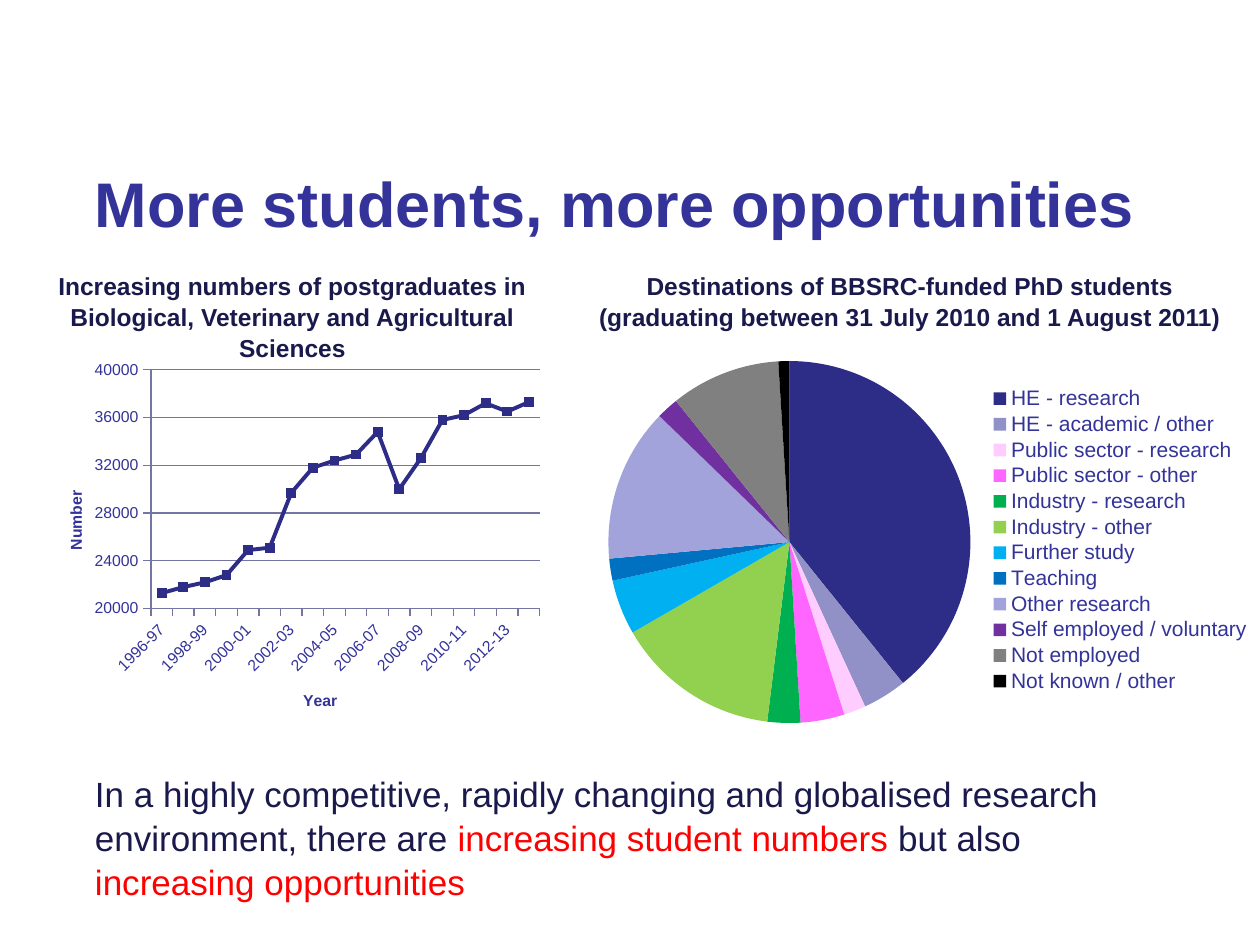
from dataclasses import dataclass

from lxml import etree
from pptx import Presentation
from pptx.chart.data import CategoryChartData
from pptx.dml.color import RGBColor
from pptx.enum.chart import XL_CHART_TYPE, XL_LEGEND_POSITION, XL_MARKER_STYLE, XL_TICK_MARK
from pptx.enum.text import MSO_ANCHOR, PP_ALIGN
from pptx.oxml.ns import qn
from pptx.util import Emu, Pt

LINE, PIE = XL_CHART_TYPE.LINE_MARKERS, XL_CHART_TYPE.PIE
LEFT, CENTER = PP_ALIGN.LEFT, PP_ALIGN.CENTER
SQUARE, OUTSIDE, RIGHT = XL_MARKER_STYLE.SQUARE, XL_TICK_MARK.OUTSIDE, XL_LEGEND_POSITION.RIGHT
TITLE_ONLY = 5


@dataclass(frozen=True)
class Theme:
    font: str = "Arial"
    blue: str = "333399"
    ink: str = "19194C"
    red: str = "FF0000"
    series: str = "2D2D87"
    grid: str = "7575A3"
    title: int = 36
    body: int = 20
    heading: int = 14
    legend: int = 12
    axis: int = 9
    spacing: float = 1.05


THEME = Theme()
TITLE = "More students, more opportunities"
HEADINGS = [
    ("Destinations of BBSRC-funded PhD students (graduating between 31 July 2010 and 1 August 2011)",
     (595, 270, 630, 74)),
    ("Increasing numbers of postgraduates in Biological, Veterinary and Agricultural Sciences",
     (15, 270, 555, 74)),
]
MESSAGE = [
    ("In a highly competitive, rapidly changing and globalised research environment, there are ", THEME.ink),
    ("increasing student numbers ", THEME.red),
    ("but also ", THEME.ink),
    ("increasing opportunities", THEME.red),
]
DESTINATIONS = [
    ("HE - research", 40, THEME.series),
    ("HE - academic / other", 4, "9191C8"),
    ("Public sector - research", 2, "FFCCFF"),
    ("Public sector - other", 4, "FF66FF"),
    ("Industry - research", 3, "00B050"),
    ("Industry - other", 15, "92D050"),
    ("Further study", 5, "00B0F0"),
    ("Teaching", 2, "0070C0"),
    ("Other research", 14, "A3A3DB"),
    ("Self employed / voluntary", 2, "7030A0"),
    ("Not employed", 10, "808080"),
    ("Not known / other", 1, "000000"),
]
FIRST_YEAR = 1996
POSTGRADUATES = [21300, 21800, 22200, 22800, 24900, 25100, 29700, 31800, 32400,
                 32900, 34800, 30000, 32600, 35800, 36200, 37200, 36500, 37300]


def px(value):
    return Emu(round(value * 914400 / 126))


def place(shape, box):
    shape.left, shape.top, shape.width, shape.height = map(px, box)


def style(font, size, color, bold=False):
    font.name, font.size, font.bold = THEME.font, Pt(size), bold
    font.color.rgb = RGBColor.from_string(color)


def write(shape, box, runs, size, bold=False, align=LEFT, spacing=1.0):
    place(shape, box)
    frame = shape.text_frame
    frame.word_wrap = True
    frame.vertical_anchor = MSO_ANCHOR.TOP
    frame.margin_left = frame.margin_top = frame.margin_right = frame.margin_bottom = 0
    paragraph = frame.paragraphs[0]
    paragraph.alignment, paragraph.line_spacing = align, spacing
    for text, color in runs:
        run = paragraph.add_run()
        run.text = text
        style(run.font, size, color, bold)


def add_text(slide, box, *args, **options):
    write(slide.shapes.add_textbox(0, 0, 0, 0), box, *args, **options)


def set_layout(parent, index, box, area, inner=False):
    for old in parent.findall(qn("c:layout")):
        parent.remove(old)
    layout = etree.Element(qn("c:layout"))
    parent.insert(index, layout)
    manual = etree.SubElement(layout, qn("c:manualLayout"))
    fractions = [(box[0] - area[0]) / area[2], (box[1] - area[1]) / area[3]]
    fractions += [length / area[i] for i, length in enumerate(box[2:], 2)]
    settings = [("layoutTarget", "inner")] if inner else []
    settings += [("xMode", "edge"), ("yMode", "edge")]
    settings += [(name, f"{value:.3f}") for name, value in zip("xywh", fractions)]
    for name, value in settings:
        etree.SubElement(manual, qn(f"c:{name}"), val=value)


def add_chart(slide, kind, area, plot_box, categories, values):
    data = CategoryChartData()
    data.categories = categories
    data.add_series("Series 1", values)
    chart = slide.shapes.add_chart(kind, *map(px, area), data).chart
    chart.has_title = chart.has_legend = False
    style(chart.font, 10, THEME.blue)
    plot_area = chart.plots[0]._element.getparent()
    set_layout(plot_area, 0, plot_box, area, inner=True)
    return chart


def add_pie(slide):
    area = (541, 344, 774, 397)
    names, values, colors = zip(*DESTINATIONS)
    chart = add_chart(slide, PIE, area, (608, 361, 362, 362), names, values)
    plot = chart.plots[0]
    plot.vary_by_categories = True
    for index, color in enumerate(colors):
        point = plot.series[0].points[index].format
        point.fill.solid()
        point.fill.fore_color.rgb = RGBColor.from_string(color)
        point.line.fill.background()
    chart.has_legend = True
    chart.legend.position = RIGHT
    chart.legend.include_in_layout = False
    style(chart.legend.font, THEME.legend, THEME.blue)
    set_layout(chart.legend._element, 1, (985, 384, 270, 312), area)


def add_line(slide):
    area = (35, 354, 515, 378)
    years = [f"{year}-{(year + 1) % 100:02d}"
             for year in range(FIRST_YEAR, FIRST_YEAR + len(POSTGRADUATES))]
    chart = add_chart(slide, LINE, area, (151, 370, 389, 239), years, POSTGRADUATES)
    chart.plots[0].vary_by_categories = False
    series = chart.plots[0].series[0]
    color = RGBColor.from_string(THEME.series)
    series.smooth = False
    series.format.line.color.rgb = color
    series.format.line.width = Pt(2.25)
    series.marker.style, series.marker.size = SQUARE, 5
    series.marker.format.fill.solid()
    series.marker.format.fill.fore_color.rgb = color
    series.marker.format.line.color.rgb = color

    value_axis, category_axis = chart.value_axis, chart.category_axis
    value_axis.minimum_scale, value_axis.maximum_scale, value_axis.major_unit = 20000, 40000, 4000
    value_axis.has_major_gridlines = True
    value_axis.tick_labels.number_format = "0"
    value_axis.tick_labels.number_format_is_linked = False
    for axis, name, corner in ((category_axis, "Year", (300, 687)), (value_axis, "Number", (63, 488))):
        axis.major_tick_mark = OUTSIDE
        style(axis.tick_labels.font, THEME.axis, THEME.blue)
        run = axis.axis_title.text_frame.paragraphs[0].add_run()
        run.text = name
        style(run.font, THEME.axis, THEME.blue, bold=True)
        set_layout(axis.axis_title._element, 1, corner, area)
    for line in (value_axis.major_gridlines.format.line, value_axis.format.line, category_axis.format.line):
        line.color.rgb = RGBColor.from_string(THEME.grid)
        line.width = Pt(0.75)
    value_axis.axis_title.text_frame._txBody.find(qn("a:bodyPr")).set("rot", "-5400000")
    element = category_axis._element
    element.find(qn("c:txPr")).find(qn("a:bodyPr")).set("rot", "-2700000")
    skip = etree.Element(qn("c:tickLblSkip"), val="2")
    element.find(qn("c:noMultiLvlLbl")).addprevious(skip)


def main():
    presentation = Presentation()
    presentation.slide_width, presentation.slide_height = px(1260), px(945)
    slide = presentation.slides.add_slide(presentation.slide_layouts[TITLE_ONLY])
    write(slide.shapes.title, (95, 165, 1062, 69), [(TITLE, THEME.blue)], THEME.title, bold=True)
    add_pie(slide)
    for text, box in HEADINGS:
        add_text(slide, box, [(text, THEME.ink)], THEME.heading,
                 bold=True, align=CENTER, spacing=THEME.spacing)
    add_line(slide)
    add_text(slide, (95, 770, 1062, 149), MESSAGE, THEME.body, spacing=THEME.spacing)
    presentation.save("out.pptx")


if __name__ == "__main__":
    main()
